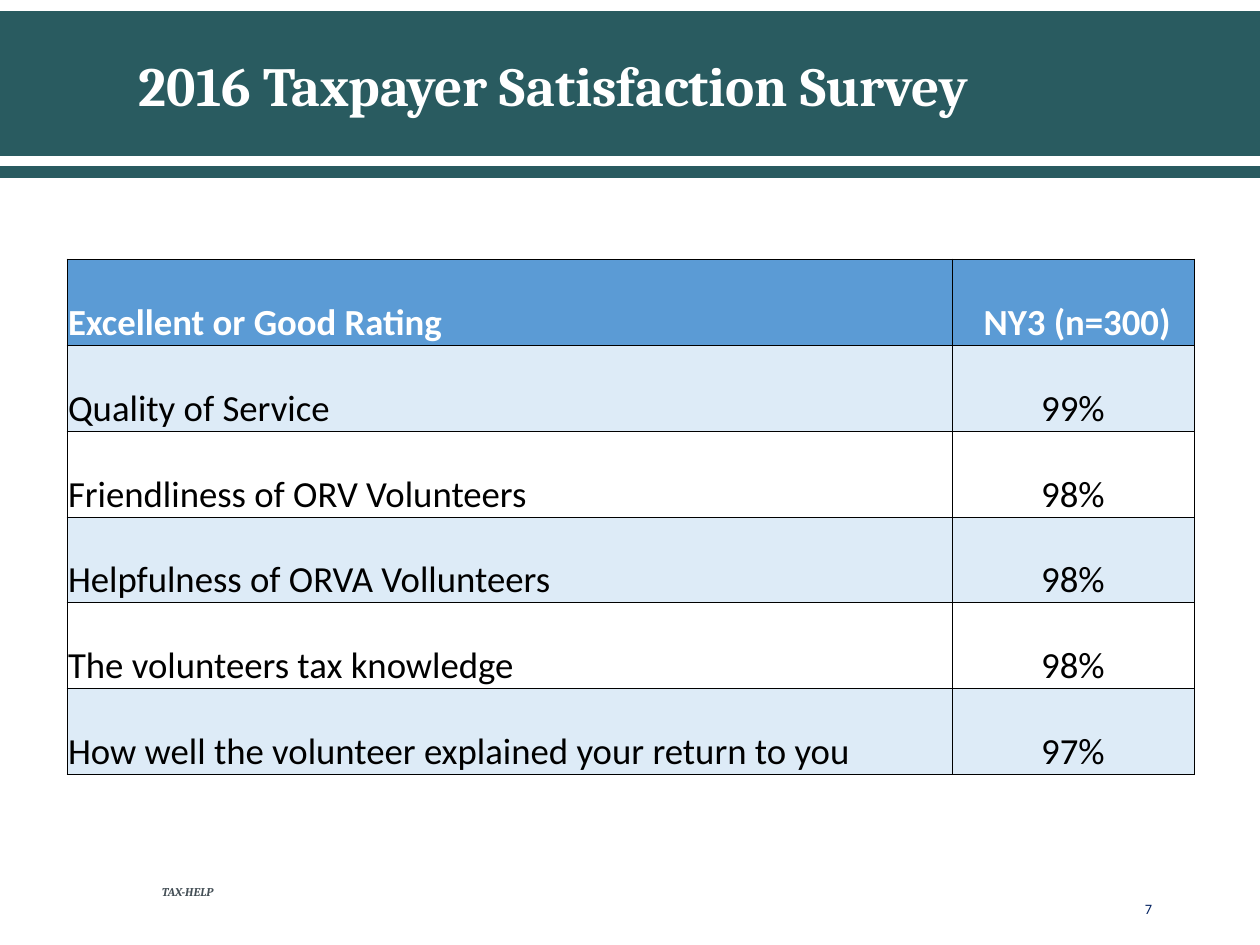
from dataclasses import dataclass

from lxml.etree import SubElement
from pptx import Presentation
from pptx.dml.color import RGBColor
from pptx.enum.shapes import MSO_CONNECTOR, MSO_SHAPE
from pptx.enum.text import MSO_ANCHOR, PP_ALIGN
from pptx.oxml.ns import qn
from pptx.util import Emu, Pt

PX = 914400 / 126
TEAL, WHITE, BLACK = "295B60", "FFFFFF", "000000"
HEADER_BLUE, BAND_BLUE = "5B9BD5", "DDEBF7"

RATINGS = [
    ("Excellent or Good Rating", " NY3 (n=300)"),
    ("Quality of Service", "99%"),
    ("Friendliness of ORV Volunteers", "98%"),
    ("Helpfulness of ORVA Vollunteers", "98%"),
    ("The volunteers tax knowledge", "98%"),
    ("How well the volunteer explained your return to you", "97%"),
]
COLUMN_WIDTHS = (885, 242)
ROW_HEIGHT = 86


@dataclass
class Style:
    size: float
    color: str
    font: str = "Calibri"
    bold: bool = False
    italic: bool = False
    align: PP_ALIGN = PP_ALIGN.LEFT


@dataclass
class Label:
    text: str
    left: int
    top: int
    width: int
    height: int
    style: Style
    anchor: MSO_ANCHOR
    side_margin: int = 13


LABELS = [
    Label("TAX-HELP", 162, 878, 88, 26,
          Style(6.8, "444F56", "Cambria", bold=True, italic=True), MSO_ANCHOR.TOP, 0),
    Label("2016 Taxpayer Satisfaction Survey", 126, 21, 1040, 126,
          Style(31.5, WHITE, "Cambria", bold=True), MSO_ANCHOR.MIDDLE),
    Label("7", 1018, 861, 147, 63,
          Style(8.2, "002060", align=PP_ALIGN.RIGHT), MSO_ANCHOR.BOTTOM),
]


def px(length: int) -> Emu:
    return Emu(round(length * PX))


def rgb(color: str) -> RGBColor:
    return RGBColor.from_string(color)


def write(frame, text: str, style: Style) -> None:
    frame.text = text
    para = frame.paragraphs[0]
    para.alignment = style.align
    font = para.runs[0].font
    font.name, font.size = style.font, Pt(style.size)
    font.bold, font.italic = style.bold, style.italic
    font.color.rgb = rgb(style.color)


def add_header(page) -> None:
    band = page.shapes.add_shape(MSO_SHAPE.RECTANGLE, 0, px(11), px(1260), px(167))
    band.shadow.inherit = False
    band.fill.solid()
    band.fill.fore_color.rgb = rgb(TEAL)
    band.line.fill.background()
    stripe = page.shapes.add_connector(
        MSO_CONNECTOR.STRAIGHT, 0, px(161), px(1260), px(161))
    stripe.line.color.rgb = rgb(WHITE)
    stripe.line.width = Pt(6)
    SubElement(stripe._element.spPr, qn("a:effectLst"))


def add_label(page, label: Label) -> None:
    box = page.shapes.add_textbox(
        px(label.left), px(label.top), px(label.width), px(label.height))
    frame = box.text_frame
    frame.word_wrap = True
    frame.vertical_anchor = label.anchor
    frame.margin_left = frame.margin_right = px(label.side_margin)
    write(frame, label.text, label.style)


def add_borders(cell) -> None:
    """Put the four side lines ahead of the fill, as the schema requires."""
    properties = cell._tc.get_or_add_tcPr()
    for position, side in enumerate(("lnL", "lnR", "lnT", "lnB")):
        line = SubElement(properties, qn(f"a:{side}"), w=str(Pt(0.5)))
        SubElement(SubElement(line, qn("a:solidFill")), qn("a:srgbClr"), val=BLACK)
        properties.insert(position, line)


def fill_cell(cell, text: str, row: int, column: int) -> None:
    is_header = row == 0
    cell.margin_left = cell.margin_right = cell.margin_top = px(1)
    cell.margin_bottom = 0
    cell.vertical_anchor = MSO_ANCHOR.BOTTOM
    if is_header or row % 2:
        cell.fill.solid()
        cell.fill.fore_color.rgb = rgb(HEADER_BLUE if is_header else BAND_BLUE)
    else:
        cell.fill.background()
    add_borders(cell)
    write(cell.text_frame, text, Style(
        21, WHITE if is_header else BLACK, bold=is_header,
        align=PP_ALIGN.CENTER if column else PP_ALIGN.LEFT))


def add_ratings_table(page) -> None:
    table = page.shapes.add_table(
        len(RATINGS), len(COLUMN_WIDTHS), px(67), px(259),
        px(sum(COLUMN_WIDTHS)), px(ROW_HEIGHT * len(RATINGS))).table
    for column, width in zip(table.columns, COLUMN_WIDTHS):
        column.width = px(width)
    for row, texts in enumerate(RATINGS):
        table.rows[row].height = px(ROW_HEIGHT)
        for column, text in enumerate(texts):
            fill_cell(table.cell(row, column), text, row, column)


def main() -> None:
    deck = Presentation()
    deck.slide_width, deck.slide_height = px(1260), px(945)
    page = deck.slides.add_slide(deck.slide_layouts[6])
    add_header(page)
    for label in LABELS:
        add_label(page, label)
    add_ratings_table(page)
    deck.save("out.pptx")


if __name__ == "__main__":
    main()
